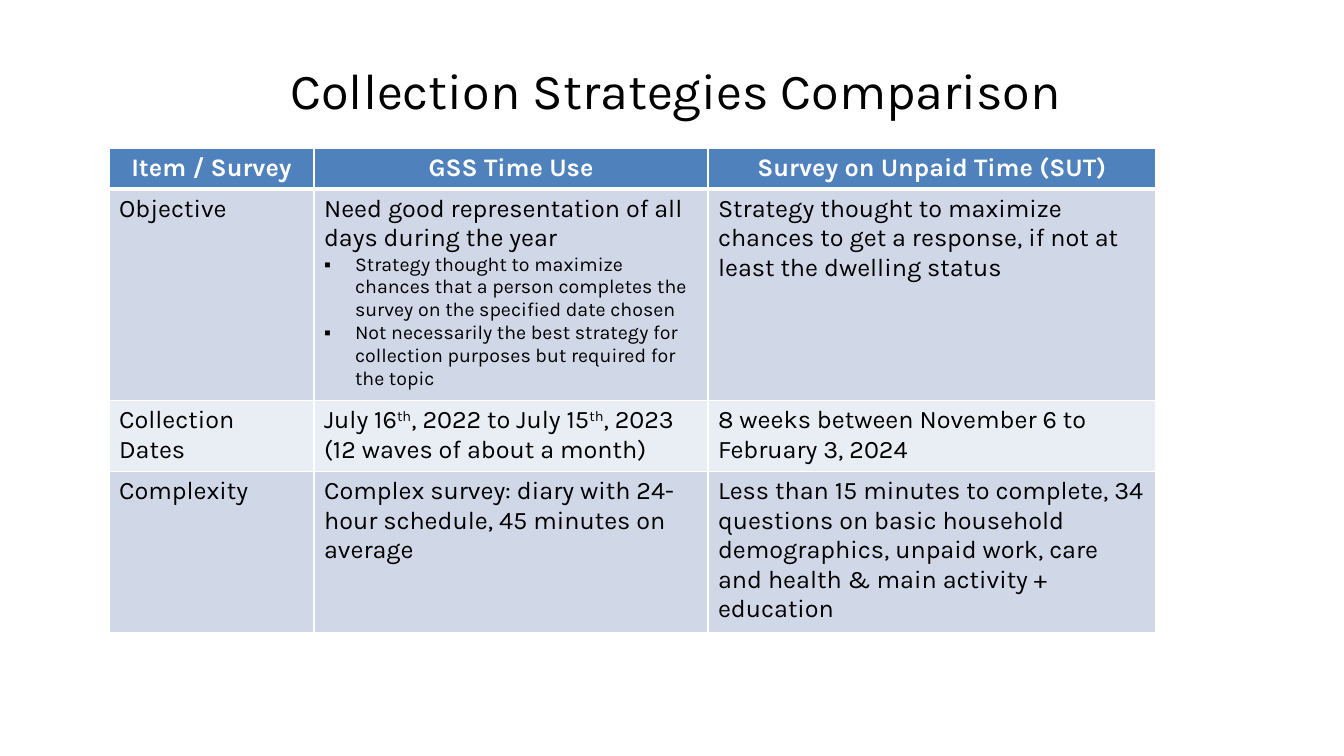
from lxml.etree import SubElement
from pptx import Presentation
from pptx.dml.color import RGBColor
from pptx.enum.text import MSO_ANCHOR, PP_ALIGN
from pptx.oxml.ns import qn
from pptx.util import Pt

TITLE = "Collection Strategies Comparison"
HEAD = ["Item / Survey", "GSS Time Use", "Survey on Unpaid Time (SUT)"]
# Each cell is a list of paragraphs; "▪" starts a bullet, "^" encloses superscript.
BODY = [
    [["Objective"],
     ["Need good representation of all days during the year",
      "▪Strategy thought to maximize chances that a person completes "
      "the survey on the specified date chosen",
      "▪Not necessarily the best strategy for collection purposes "
      "but required for the topic"],
     ["Strategy thought to maximize chances to get a response, "
      "if not at least the dwelling status"]],
    [["Collection Dates"],
     ["July 16^th^, 2022 to July 15^th^, 2023", "(12 waves of about a month)"],
     ["8 weeks between November 6 to February 3, 2024"]],
    [["Complexity"],
     ["Complex survey: diary with 24-hour schedule, 45 minutes on average"],
     ["Less than 15 minutes to complete, 34 questions on basic household "
      "demographics, unpaid work, care and health & main activity + education"]],
]
COLS = [205, 394, 448]
ROWS = [41, 206, 69, 158]
LEFT, TOP = 109, 148
TITLE_BOX = (45, 30, 1262, 118)
INDENT = 31
THEME = {
    "font": "Karla", "title": 36, "text": 18, "bullet": 14,
    "ink": "000000", "light": "FFFFFF", "head": "4F81BD",
    "bands": ["D0D8E8", "E9EDF4"], "rule": 1, "thick": 3,
}


def px(count):
    return round(count * 914400 / 100.8)


def style(par, size, color, bold=False):
    for run in par.runs:
        font = run.font
        font.name, font.size, font.bold = THEME["font"], Pt(size), bold
        font.color.rgb = RGBColor.from_string(color)


def bullet(par):
    props = par._p.get_or_add_pPr()
    props.set("marL", str(px(INDENT)))
    props.set("indent", str(-px(INDENT)))
    SubElement(props, qn("a:buFont"), typeface="Arial")
    SubElement(props, qn("a:buChar"), char="▪")


def write(par, text):
    if text.startswith("▪"):
        bullet(par)
        par.text = text[1:]
        style(par, THEME["bullet"], THEME["ink"])
        return
    for i, part in enumerate(text.split("^")):
        run = par.add_run()
        run.text = part
        if i % 2:
            run._r.get_or_add_rPr().set("baseline", "30000")
    style(par, THEME["text"], THEME["ink"])


def border(cell, row):
    props = cell._tc.get_or_add_tcPr()
    for side in "LRTB":
        thick = (row, side) in [(0, "B"), (1, "T")]
        width = Pt(THEME["thick" if thick else "rule"])
        line = SubElement(props, qn(f"a:ln{side}"), w=str(width))
        fill = SubElement(line, qn("a:solidFill"))
        SubElement(fill, qn("a:srgbClr"), val=THEME["light"])


def paint(cell, row, color):
    border(cell, row)
    cell.fill.solid()
    cell.fill.fore_color.rgb = RGBColor.from_string(color)


def add_title(slide):
    frame = slide.shapes.add_textbox(*map(px, TITLE_BOX)).text_frame
    frame.word_wrap = True
    frame.vertical_anchor = MSO_ANCHOR.MIDDLE
    frame.text = TITLE
    par = frame.paragraphs[0]
    par.alignment = PP_ALIGN.CENTER
    style(par, THEME["title"], THEME["ink"])


def add_grid(slide):
    size = (len(ROWS), len(COLS))
    box = (LEFT, TOP, sum(COLS), sum(ROWS))
    table = slide.shapes.add_table(*size, *map(px, box)).table
    for col, width in zip(table.columns, COLS):
        col.width = px(width)
    for row, height in zip(table.rows, ROWS):
        row.height = px(height)
    for c, text in enumerate(HEAD):
        cell = table.cell(0, c)
        paint(cell, 0, THEME["head"])
        cell.text_frame.text = text
        par = cell.text_frame.paragraphs[0]
        par.alignment = PP_ALIGN.CENTER
        style(par, THEME["text"], THEME["light"], True)
    for r, line in enumerate(BODY, 1):
        for c, texts in enumerate(line):
            cell = table.cell(r, c)
            paint(cell, r, THEME["bands"][(r - 1) % 2])
            frame = cell.text_frame
            for i, text in enumerate(texts):
                write(frame.add_paragraph() if i else frame.paragraphs[0], text)


def main():
    deck = Presentation()
    deck.slide_width, deck.slide_height = px(1344), px(756)
    slide = deck.slides.add_slide(deck.slide_layouts[6])
    add_title(slide)
    add_grid(slide)
    deck.save("out.pptx")


if __name__ == "__main__":
    main()
